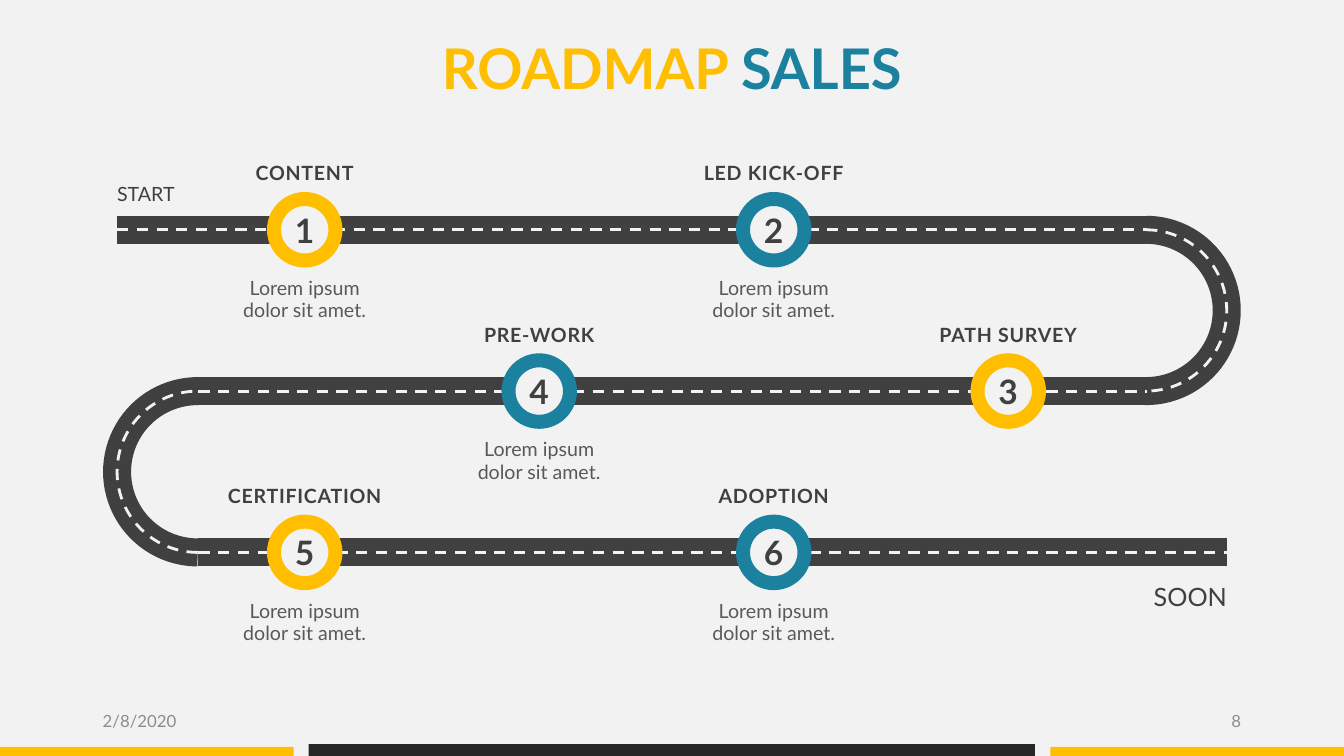
from lxml import etree
from pptx import Presentation
from pptx.dml.color import RGBColor
from pptx.enum.dml import MSO_LINE
from pptx.enum.shapes import MSO_CONNECTOR, MSO_SHAPE
from pptx.enum.text import MSO_ANCHOR, PP_ALIGN
from pptx.oxml.ns import qn
from pptx.util import Cm, Pt

LEFT, CENTER, RIGHT = PP_ALIGN.LEFT, PP_ALIGN.CENTER, PP_ALIGN.RIGHT
TOP, MIDDLE = MSO_ANCHOR.TOP, MSO_ANCHOR.MIDDLE
RECT, OVAL, ARC = MSO_SHAPE.RECTANGLE, MSO_SHAPE.OVAL, MSO_SHAPE.ARC
STRAIGHT, DASH = MSO_CONNECTOR.STRAIGHT, MSO_LINE.DASH

FONT = "Lato"
YELLOW, TEAL, DARK, PALE = "FFBE00", "1C819E", "404040", "F2F2F2"
GRAY, LIGHT_GRAY, BLACK = "595959", "8C8C8C", "262626"


def rgb(value):
    return RGBColor.from_string(value)


def write(sp, text, size, color, align=CENTER, bold=False, spacing=None,
          anchor=TOP, tracking=0):
    tf = sp.text_frame
    tf.word_wrap = True
    tf.vertical_anchor = anchor
    tf.margin_left = tf.margin_right = tf.margin_top = tf.margin_bottom = 0
    tf.text = text
    p = tf.paragraphs[0]
    p.alignment = align
    if spacing:
        p.line_spacing = Pt(spacing)
    r = p.runs[0]
    r.font.name, r.font.size, r.font.bold = FONT, Pt(size), bold
    r.font.color.rgb = rgb(color)
    if tracking:
        r._r.get_or_add_rPr().set("spc", str(tracking))
    return p


prs = Presentation()
prs.slide_width, prs.slide_height = Cm(33.87), Cm(19.05)
s = prs.slides.add_slide(prs.slide_layouts[5])
s.background.fill.solid()
s.background.fill.fore_color.rgb = rgb(PALE)

# Title in two colours
title = s.shapes.title
title.left, title.top, title.width, title.height = Cm(1.98), Cm(0.84), Cm(29.9), Cm(1.7)
p = write(title, "ROADMAP ", 40, YELLOW, bold=True)
r = p.add_run()
r.text = "SALES"
r.font.name, r.font.size, r.font.bold = FONT, Pt(40), True
r.font.color.rgb = rgb(TEAL)

# Bars along the bottom edge
for x, width, height, color in [(0, 7.4, 0.23, YELLOW), (7.78, 18.3, 0.3, BLACK),
                                (26.47, 7.4, 0.23, YELLOW)]:
    sp = s.shapes.add_shape(RECT, Cm(x), Cm(19.05 - height), Cm(width), Cm(height))
    sp.shadow.inherit = False
    sp.fill.solid()
    sp.fill.fore_color.rgb = rgb(color)
    sp.line.fill.background()

# Road: dark surface first, then the dashed centre line
ROW_TOP, ROW_STEP = 5.79, 4.065
row_y = [ROW_TOP + i * ROW_STEP for i in range(3)]
straights = [(2.95, 28.9), (5, 28.9), (5, 30.92)]
bends = [(26.85, 0), (2.95, 180)]
for color, width, dash in [(DARK, 20, None), (PALE, 2, DASH)]:
    parts = []
    for y, (x1, x2) in zip(row_y, straights):
        parts.append(s.shapes.add_connector(STRAIGHT, Cm(x1), Cm(y), Cm(x2), Cm(y)))
    for y, (x, rotation) in zip(row_y, bends):
        sp = s.shapes.add_shape(ARC, Cm(x), Cm(y), Cm(ROW_STEP), Cm(ROW_STEP))
        sp.adjustments[0], sp.adjustments[1] = 162, 54.5
        sp.rotation = rotation
        sp.fill.background()
        parts.append(sp)
    for part in parts:
        part.line.color.rgb = rgb(color)
        part.line.width = Pt(width)
        if dash:
            part.line.dash_style = dash
        etree.SubElement(part._element.spPr, qn("a:effectLst"))

# Milestones: row, column, ring colour, heading, description
LOREM = "Lorem ipsum dolor sit amet."
COL_LEFT, COL_STEP, RING = 7.68, 5.91, 1.55
milestones = [
    (0, 0, YELLOW, "CONTENT", LOREM),
    (0, 2, TEAL, "LED KICK-OFF", LOREM),
    (1, 3, YELLOW, "PATH SURVEY", None),
    (1, 1, TEAL, "PRE-WORK", LOREM),
    (2, 0, YELLOW, "CERTIFICATION", LOREM),
    (2, 2, TEAL, "ADOPTION", LOREM),
]
for number, (row, col, color, heading, description) in enumerate(milestones, 1):
    x, y = COL_LEFT + col * COL_STEP, row_y[row]
    sp = s.shapes.add_shape(OVAL, Cm(x - RING / 2), Cm(y - RING / 2), Cm(RING), Cm(RING))
    sp.shadow.inherit = False
    sp.fill.solid()
    sp.fill.fore_color.rgb = rgb(PALE)
    sp.line.color.rgb = rgb(color)
    sp.line.width = Pt(10)
    write(sp, str(number), 24, DARK, bold=True, anchor=MIDDLE, tracking=50)

    sp = s.shapes.add_textbox(Cm(x - 2.05), Cm(y - 1.84), Cm(4.1), Cm(0.7))
    write(sp, heading, 14, DARK, bold=True, spacing=20, tracking=50)
    if description:
        sp = s.shapes.add_textbox(Cm(x - 1.82), Cm(y + 1.19), Cm(3.64), Cm(1.14))
        write(sp, description, 14, GRAY, spacing=16)

# Road ends
start = s.shapes.add_textbox(Cm(2.95), Cm(4.47), Cm(2.5), Cm(0.64))
write(start, "START", 14, DARK, LEFT, spacing=20)
soon = s.shapes.add_textbox(Cm(28.42), Cm(14.71), Cm(2.5), Cm(0.7))
write(soon, "SOON", 18, DARK, RIGHT, spacing=20)

# Date and slide number
for x, text, align in [(2.59, "2/8/2020", LEFT), (24.17, "8", RIGHT)]:
    sp = s.shapes.add_textbox(Cm(x), Cm(17.65), Cm(7.11), Cm(1.02))
    write(sp, text, 12, LIGHT_GRAY, align, anchor=MIDDLE)

prs.save("out.pptx")
